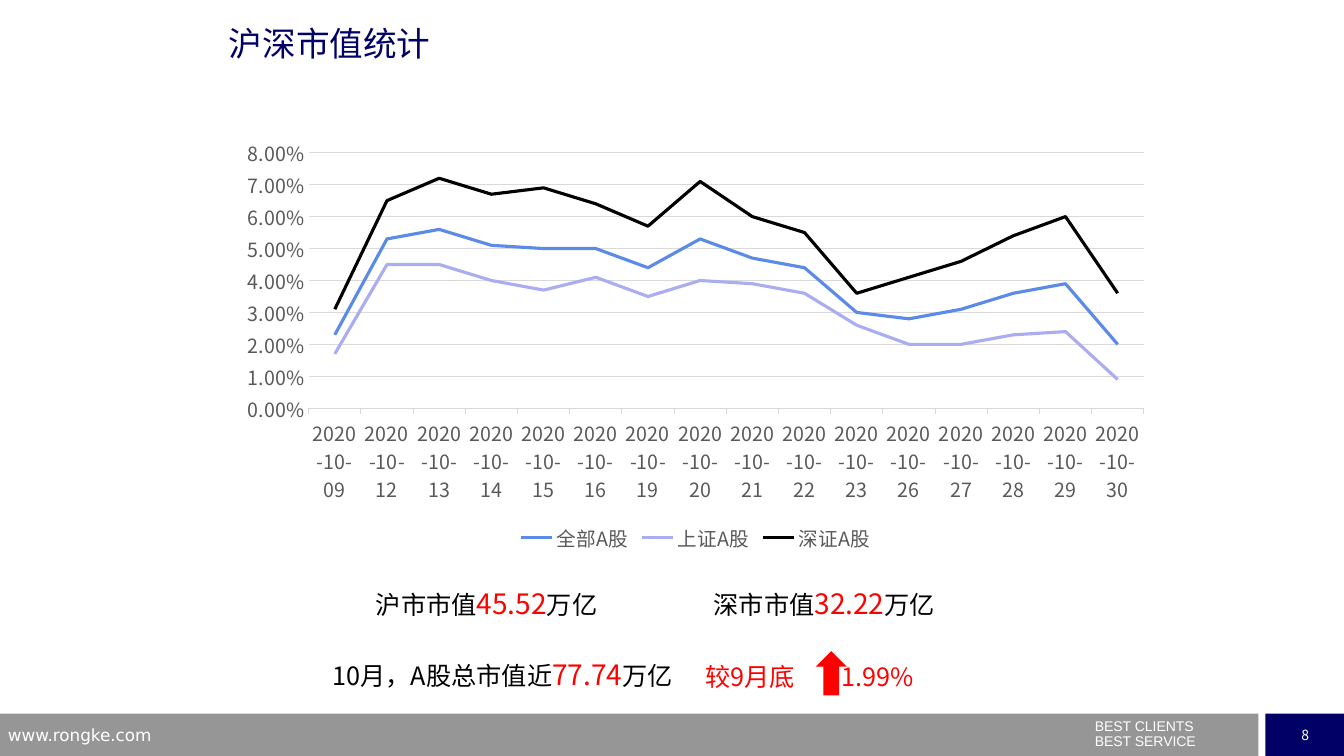
from lxml.etree import SubElement
from pptx import Presentation
from pptx.chart.data import CategoryChartData
from pptx.dml.color import RGBColor
from pptx.enum.chart import XL_CHART_TYPE, XL_LEGEND_POSITION, XL_TICK_MARK
from pptx.enum.shapes import MSO_SHAPE
from pptx.enum.text import MSO_ANCHOR, PP_ALIGN
from pptx.oxml.ns import qn
from pptx.util import Pt

PX = 9144
CJK = "Noto Sans CJK SC"
COLORS = {
    "white": "FFFFFF", "black": "000000", "navy": "000066", "red": "FF0000",
    "bar": "969696", "label": "595959", "grid": "D9D9D9",
    "blue": "5C8AE7", "lilac": "ABADF1",
}
DAYS = [44113, *range(44116, 44121), *range(44123, 44128), *range(44130, 44135)]
SERIES = [
    ("全部A股", "blue", [0.023, 0.053, 0.056, 0.051, 0.05, 0.05, 0.044, 0.053,
                       0.047, 0.044, 0.03, 0.028, 0.031, 0.036, 0.039, 0.02]),
    ("上证A股", "lilac", [0.017, 0.045, 0.045, 0.04, 0.037, 0.041, 0.035, 0.04,
                        0.039, 0.036, 0.026, 0.02, 0.02, 0.023, 0.024, 0.009]),
    ("深证A股", "black", [0.031, 0.065, 0.072, 0.067, 0.069, 0.064, 0.057, 0.071,
                        0.06, 0.055, 0.036, 0.041, 0.046, 0.054, 0.06, 0.036]),
]
MARKET_VALUES = [
    ((363, 577, 284, 44), "沪市市值", "45.52"),
    ((698, 577, 284, 44), "深市市值", "32.22"),
    ((320, 647, 402, 44), "10月，A股总市值近", "77.74"),
]


def scaled(box):
    return [length * PX for length in box]


def color(name):
    return RGBColor.from_string(COLORS[name])


def set_all(target, values):
    for name, value in values.items():
        setattr(target, name, value)


def format_font(font, size, color_name, name=CJK):
    set_all(font, {"size": Pt(size), "name": name, "bold": False})
    font.color.rgb = color(color_name)


def add_run(paragraph, text, size, color_name, font_name=CJK):
    run = paragraph.add_run()
    run.text = text
    format_font(run.font, size, color_name, font_name)
    SubElement(run.font._element, qn("a:ea"), typeface=font_name)


def add_text(slide, box):
    frame = slide.shapes.add_textbox(*scaled(box)).text_frame
    frame.word_wrap = True
    return frame


def add_block(slide, kind, box, fill):
    shape = slide.shapes.add_shape(kind, *scaled(box))
    shape.shadow.inherit = False
    shape.fill.solid()
    shape.fill.fore_color.rgb = color(fill)
    shape.line.fill.background()
    return shape


def add_title(slide, text):
    title = slide.shapes.title
    set_all(title, dict(zip(("left", "top", "width", "height"), scaled((217, 18, 900, 125)))))
    set_all(title.text_frame, {"vertical_anchor": MSO_ANCHOR.TOP, "word_wrap": True})
    paragraph = title.text_frame.paragraphs[0]
    paragraph.alignment = PP_ALIGN.LEFT
    add_run(paragraph, text, 24, "navy")


def add_footer(slide):
    add_block(slide, MSO_SHAPE.RECTANGLE, (0, 708, 1248, 42), "bar")
    number = add_block(slide, MSO_SHAPE.RECTANGLE, (1255, 708, 79, 42), "navy")
    number.text_frame.vertical_anchor = MSO_ANCHOR.MIDDLE
    paragraph = number.text_frame.paragraphs[0]
    paragraph.alignment = PP_ALIGN.CENTER
    add_run(paragraph, "8", 10, "white")

    motto = add_text(slide, (1076, 714, 256, 36))
    first, second = motto.paragraphs[0], motto.add_paragraph()
    second.space_before = Pt(5)
    for paragraph, text in ((first, "BEST CLIENTS"), (second, "BEST SERVICE")):
        paragraph.line_spacing = 0.5
        add_run(paragraph, text, 10, "white", "Arial")

    address = add_text(slide, (-2, 714, 322, 26))
    add_run(address.paragraphs[0], "www.rongke.com", 12, "white", "DejaVu Sans")


def add_market_value(slide, box, label, value):
    paragraph = add_text(slide, box).paragraphs[0]
    add_run(paragraph, label, 18, "black")
    add_run(paragraph, value, 20, "red")
    add_run(paragraph, "万亿", 18, "black")


def add_change(slide):
    paragraph = add_text(slide, (690, 651, 293, 40)).paragraphs[0]
    tabs = SubElement(paragraph._p.get_or_add_pPr(), qn("a:tabLst"))
    SubElement(tabs, qn("a:tab"), pos=str(135 * PX), algn="l")
    add_run(paragraph, "较9月底\t1.99%", 18, "red")
    add_block(slide, MSO_SHAPE.UP_ARROW, (809, 646, 31, 44), "red")


def format_axis(axis, tick, number_format):
    set_all(axis, {"major_tick_mark": tick, "minor_tick_mark": XL_TICK_MARK.NONE})
    set_all(axis.tick_labels, {"number_format": number_format,
                               "number_format_is_linked": False})
    format_font(axis.tick_labels.font, 14, "label")


def format_line(line, color_name, width):
    line.color.rgb = color(color_name)
    line.width = Pt(width)


def add_line_chart(slide, box):
    data = CategoryChartData(number_format="0.00%")
    data.categories = DAYS
    data.categories.number_format = "yyyy\\-mm\\-dd"
    for name, _, values in SERIES:
        data.add_series(name, values)
    chart = slide.shapes.add_chart(XL_CHART_TYPE.LINE, *scaled(box), data).chart
    format_font(chart.font, 10, "black")
    set_all(chart, {"has_title": False, "has_legend": True})
    set_all(chart.legend, {"position": XL_LEGEND_POSITION.BOTTOM,
                           "include_in_layout": False})
    format_font(chart.legend.font, 14, "label")

    days, rates = chart.category_axis, chart.value_axis
    format_axis(days, XL_TICK_MARK.OUTSIDE, "yyyy\\-mm\\-dd")
    format_line(days.format.line, "grid", 0.75)
    days._element.find(qn("c:auto")).set("val", "0")
    format_axis(rates, XL_TICK_MARK.NONE, "0.00%")
    set_all(rates, {"minimum_scale": 0, "maximum_scale": 0.08, "major_unit": 0.01})
    rates.format.line.fill.background()
    format_line(rates.major_gridlines.format.line, "grid", 0.75)

    chart.plots[0].vary_by_categories = False
    for series, (_, color_name, _) in zip(chart.plots[0].series, SERIES):
        series.smooth = False
        format_line(series.format.line, color_name, 2.25)


def main():
    presentation = Presentation()
    set_all(presentation, {"slide_width": 1333 * PX, "slide_height": 750 * PX})
    slide = presentation.slides.add_slide(presentation.slide_layouts[5])
    add_footer(slide)
    add_title(slide, "沪深市值统计")
    add_line_chart(slide, (227, 129, 926, 422))
    for box, label, value in MARKET_VALUES:
        add_market_value(slide, box, label, value)
    add_change(slide)
    presentation.save("out.pptx")


if __name__ == "__main__":
    main()
